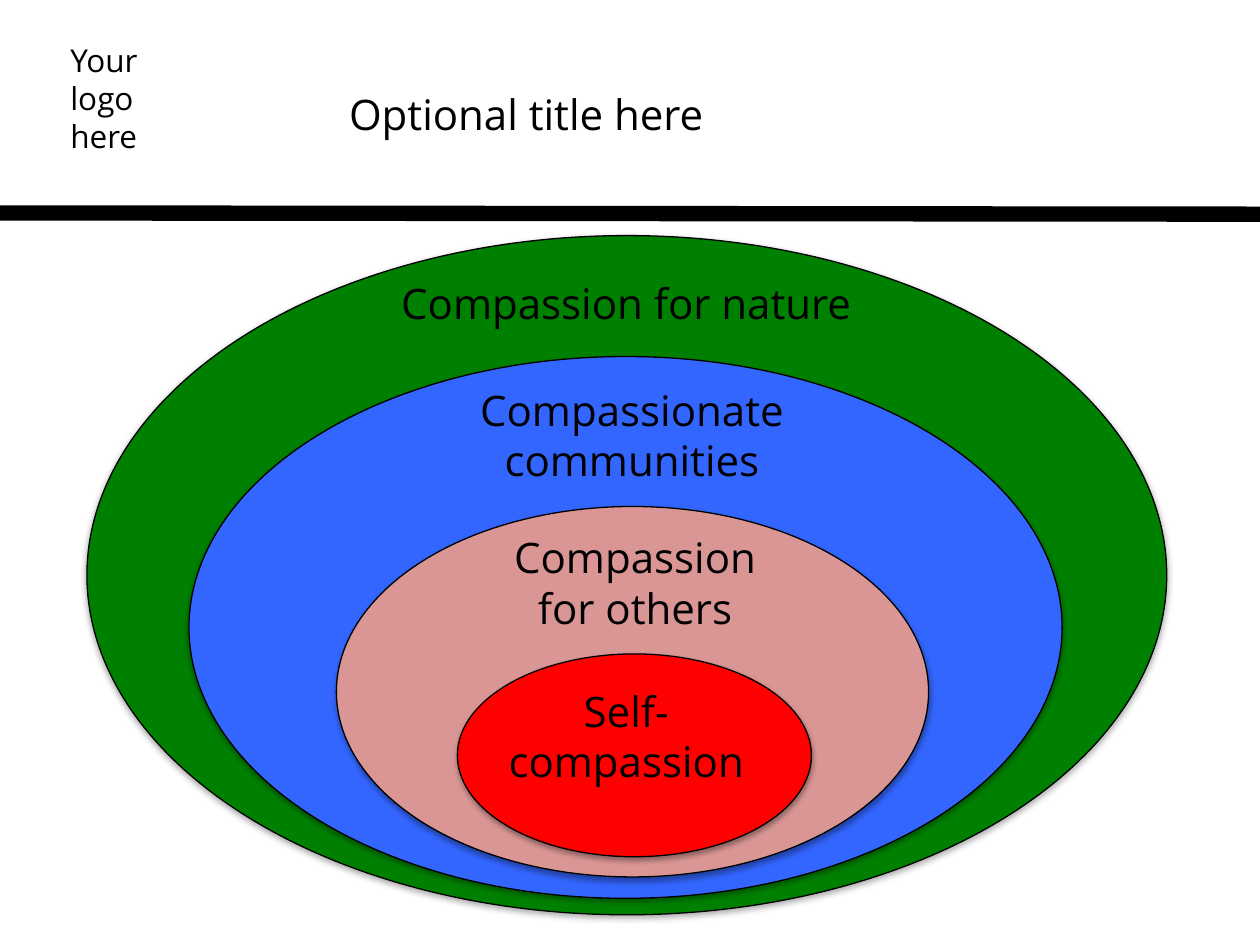
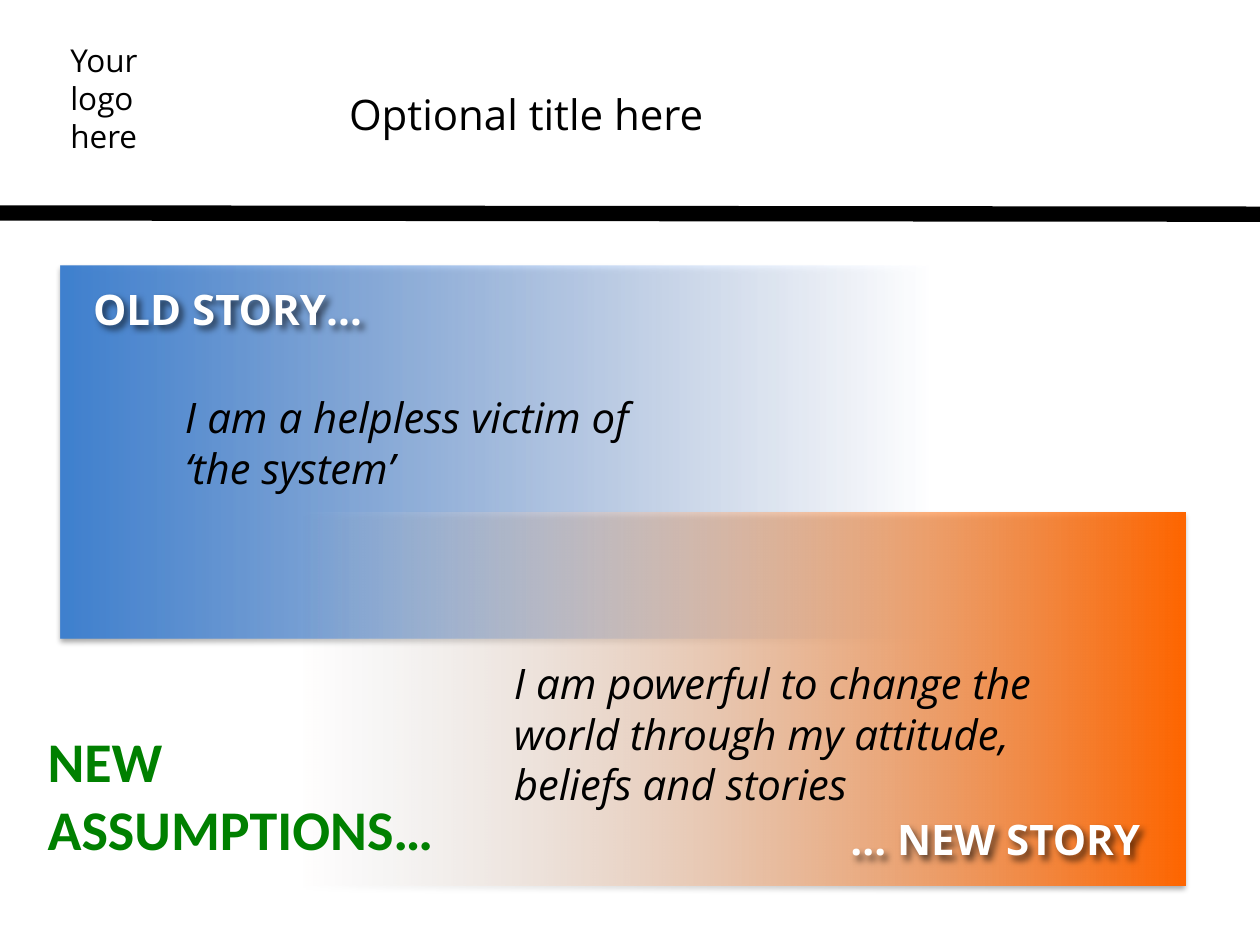
from dataclasses import dataclass

from lxml import etree
from pptx import Presentation
from pptx.dml.color import RGBColor
from pptx.enum.shapes import MSO_CONNECTOR, MSO_SHAPE
from pptx.enum.text import MSO_ANCHOR, MSO_AUTO_SIZE, PP_ALIGN
from pptx.oxml.ns import qn
from pptx.shapes.autoshape import Shape
from pptx.slide import Slide
from pptx.util import Inches, Pt

STRAIGHT = MSO_CONNECTOR.STRAIGHT
ELLIPSE = MSO_SHAPE.OVAL
RECTANGLE = MSO_SHAPE.RECTANGLE
TOP = MSO_ANCHOR.TOP
GROW = MSO_AUTO_SIZE.SHAPE_TO_FIT_TEXT
LEFT = PP_ALIGN.LEFT
CENTER = PP_ALIGN.CENTER

BLACK = RGBColor(0x00, 0x00, 0x00)
WHITE = RGBColor(0xFF, 0xFF, 0xFF)
GREEN = RGBColor(0x00, 0x80, 0x00)
BLUE = RGBColor(0x33, 0x66, 0xFF)
PINK = RGBColor(0xD9, 0x96, 0x94)
RED = RGBColor(0xFF, 0x00, 0x00)
STEEL = RGBColor(0x3F, 0x80, 0xCE)
PALE_BLUE = RGBColor(0xA4, 0xC4, 0xFF)
ORANGE = RGBColor(0xFF, 0x66, 0x00)

MAIN_FONT = "Open Sans"
ACCENT_FONT = "Calibri"

SLIDE_WIDTH = Inches(10)
SLIDE_HEIGHT = Inches(7.5)
COLUMN = SLIDE_WIDTH / 100
ROW = SLIDE_HEIGHT / 75
TITLE_ONLY_LAYOUT = 5


@dataclass(frozen=True)
class Area:
    column: float
    row: float
    columns: float
    rows: float

    def box(self) -> tuple[int, int, int, int]:
        return (
            round(self.column * COLUMN),
            round(self.row * ROW),
            round(self.columns * COLUMN),
            round(self.rows * ROW),
        )


@dataclass(frozen=True)
class Shadow:
    blur: float
    distance: float
    angle: int
    opacity: int


@dataclass(frozen=True)
class Label:
    text: str
    area: Area
    size: int = 24
    color: RGBColor = BLACK
    font: str = MAIN_FONT
    align: PP_ALIGN = LEFT
    bold: bool = False
    italic: bool = False
    shadow: Shadow | None = None


@dataclass(frozen=True)
class Ring:
    area: Area
    color: RGBColor


@dataclass(frozen=True)
class Panel:
    area: Area
    color: RGBColor
    fade_color: RGBColor
    fade_end: float
    mirrored: bool


SHAPE_SHADOW = Shadow(blur=3.1, distance=1.8, angle=90, opacity=35)
TEXT_SHADOW = Shadow(blur=4, distance=3, angle=45, opacity=60)

TITLE = Label("Optional title here", Area(26.7, 6.5, 30.9, 5))
LOGO_NOTE = Label("Your logo here", Area(4.6, 2.8, 11.7, 10.1), size=18)

RINGS = (
    Ring(Area(6.9, 18.7, 85.7, 53.9), GREEN),
    Ring(Area(15, 28.3, 69.3, 43), BLUE),
    Ring(Area(26.7, 40.2, 47, 29.4), PINK),
    Ring(Area(36.3, 51.9, 28.1, 16.1), RED),
)
RING_LABELS = (
    Label("Self-\ncompassion", Area(34.8, 53.9, 29.8, 9.1), align=CENTER),
    Label("Compassion\nfor others", Area(32.8, 41.7, 35.2, 9.1), align=CENTER),
    Label("Compassionate communities", Area(32.2, 30, 35.9, 9.1), align=CENTER),
    Label("Compassion for nature", Area(25.9, 21.5, 47.6, 5), align=CENTER),
)

PANELS = (
    Panel(Area(4.8, 21.1, 70.4, 29.6), STEEL, PALE_BLUE, 0.98, False),
    Panel(Area(23.7, 40.7, 70.4, 29.6), ORANGE, WHITE, 1, True),
)
STORY_LABELS = (
    Label("OLD STORY…", Area(6.4, 22, 28.2, 5), color=WHITE, bold=True, shadow=TEXT_SHADOW),
    Label("… NEW STORY", Area(66.5, 64.1, 29.4, 5), color=WHITE, bold=True, shadow=TEXT_SHADOW),
    Label("I am a helpless victim of ‘the system’", Area(13.7, 30.6, 40.4, 9.1), italic=True),
    Label(
        "I am powerful to change the world through my attitude, beliefs and stories",
        Area(39.8, 51.7, 49.8, 13.1),
        italic=True,
    ),
    Label(
        "NEW ASSUMPTIONS…",
        Area(2.8, 57.2, 34.7, 11.8),
        size=32,
        color=GREEN,
        font=ACCENT_FONT,
        bold=True,
    ),
)


def add_shadow(shape: Shape, shadow: Shadow) -> None:
    shape.shadow.inherit = False
    effects = shape.element.spPr.find(qn("a:effectLst"))
    outer = etree.SubElement(effects, qn("a:outerShdw"))
    outer.set("blurRad", str(Pt(shadow.blur)))
    outer.set("dist", str(Pt(shadow.distance)))
    outer.set("dir", str(shadow.angle * 60000))
    outer.set("rotWithShape", "0")
    color = etree.SubElement(outer, qn("a:srgbClr"), val=str(BLACK))
    etree.SubElement(color, qn("a:alpha"), val=str(shadow.opacity * 1000))


def write_label(shape: Shape, label: Label) -> None:
    shape.left, shape.top, shape.width, shape.height = label.area.box()
    frame = shape.text_frame
    frame.word_wrap = True
    frame.auto_size = GROW
    frame.vertical_anchor = TOP
    paragraph = frame.paragraphs[0]
    paragraph.text = label.text.replace("\n", "\v")
    paragraph.alignment = label.align
    paragraph.font.name = label.font
    paragraph.font.size = Pt(label.size)
    paragraph.font.bold = label.bold
    paragraph.font.italic = label.italic
    paragraph.font.color.rgb = label.color
    if label.shadow:
        add_shadow(shape, label.shadow)


def add_label(slide: Slide, label: Label) -> None:
    write_label(slide.shapes.add_textbox(*label.area.box()), label)


def add_header_rule(slide: Slide) -> None:
    rule = slide.shapes.add_connector(
        STRAIGHT,
        round(-2.1 * COLUMN),
        round(16.9 * ROW),
        round(101.8 * COLUMN),
        round(17 * ROW),
    )
    rule.line.color.rgb = BLACK
    rule.line.width = Pt(8.75)
    etree.SubElement(rule.element.spPr, qn("a:effectLst"))


def add_framed_slide(presentation: Presentation) -> Slide:
    slide = presentation.slides.add_slide(presentation.slide_layouts[TITLE_ONLY_LAYOUT])
    write_label(slide.shapes.title, TITLE)
    add_header_rule(slide)
    add_label(slide, LOGO_NOTE)
    return slide


def add_ring(slide: Slide, ring: Ring) -> None:
    shape = slide.shapes.add_shape(ELLIPSE, *ring.area.box())
    shape.fill.solid()
    shape.fill.fore_color.rgb = ring.color
    shape.line.color.rgb = BLACK
    shape.line.width = Pt(0.75)
    add_shadow(shape, SHAPE_SHADOW)


def add_panel(slide: Slide, panel: Panel) -> None:
    shape = slide.shapes.add_shape(RECTANGLE, *panel.area.box())
    shape.fill.gradient()
    shape.fill.gradient_angle = 0
    solid_stop, clear_stop = shape.fill.gradient_stops
    solid_stop.position, solid_stop.color.rgb = 0, panel.color
    clear_stop.position, clear_stop.color.rgb = panel.fade_end, panel.fade_color
    properties = shape.element.spPr
    clear_color = properties.findall(".//" + qn("a:srgbClr"))[-1]
    etree.SubElement(clear_color, qn("a:alpha"), val="0")
    if panel.mirrored:
        properties.find(qn("a:xfrm")).set("flipH", "1")
    shape.line.fill.background()
    add_shadow(shape, SHAPE_SHADOW)


def build_compassion_slide(presentation: Presentation) -> None:
    slide = add_framed_slide(presentation)
    for ring in RINGS:
        add_ring(slide, ring)
    for label in RING_LABELS:
        add_label(slide, label)


def build_story_slide(presentation: Presentation) -> None:
    slide = add_framed_slide(presentation)
    for panel in PANELS:
        add_panel(slide, panel)
    for label in STORY_LABELS:
        add_label(slide, label)


def main() -> None:
    presentation = Presentation()
    presentation.slide_width = SLIDE_WIDTH
    presentation.slide_height = SLIDE_HEIGHT
    build_compassion_slide(presentation)
    build_story_slide(presentation)
    presentation.save("out.pptx")


if __name__ == "__main__":
    main()
